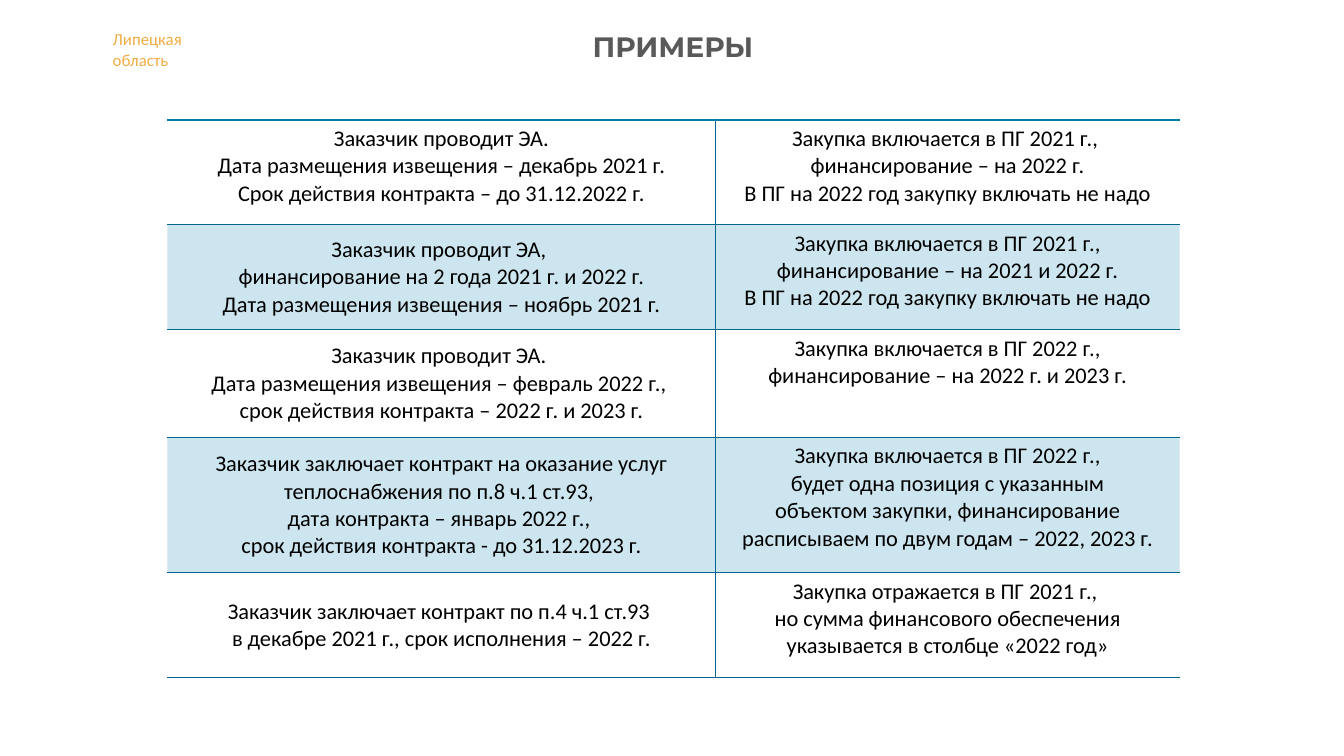
"""Build a slide with a table of procurement planning examples."""
import pptx
import pptx.dml.color
import pptx.enum.text
import pptx.oxml
import pptx.oxml.ns
import pptx.util

RGB = pptx.dml.color.RGBColor
GOLD = RGB(0xF2, 0xAC, 0x44)
GREY = RGB(0x59, 0x59, 0x59)
BLACK = RGB(0x00, 0x00, 0x00)
BLUE = RGB(0x00, 0x7F, 0xAC)
NAVY = RGB(0x00, 0x66, 0x8A)
WHITE = RGB(0xFF, 0xFF, 0xFF)

PAGE_W = pptx.util.Inches(13.33)
PAGE_H = pptx.util.Inches(7.5)
COLS = (40.81, 34.51)
ROWS = (13.87, 13.87, 14.27, 17.87, 13.87)
TINT = 20

CASES = (
    (("Заказчик проводит ЭА.",
      "Дата размещения извещения – декабрь 2021 г.",
      "Срок действия контракта – до 31.12.2022 г."),
     ("Закупка включается в ПГ 2021 г., ",
      "финансирование – на 2022 г.",
      "В ПГ на 2022 год закупку включать не надо")),
    (("Заказчик проводит ЭА, ",
      "финансирование на 2 года 2021 г. и 2022 г.",
      "Дата размещения извещения – ноябрь 2021 г."),
     ("Закупка включается в ПГ 2021 г.,",
      "финансирование – на 2021 и 2022 г.",
      "В ПГ на 2022 год закупку включать не надо")),
    (("Заказчик проводит ЭА. ",
      "Дата размещения извещения – февраль 2022 г., ",
      "срок действия контракта – 2022 г. и 2023 г."),
     ("Закупка включается в ПГ 2022 г.,",
      "финансирование – на 2022 г. и 2023 г.")),
    (("Заказчик заключает контракт на оказание услуг",
      "теплоснабжения по п.8 ч.1 ст.93, ",
      "дата контракта – январь 2022 г., ",
      "срок действия контракта - до 31.12.2023 г."),
     ("Закупка включается в ПГ 2022 г.,",
      "будет одна позиция с указанным",
      "объектом закупки, финансирование",
      "расписываем по двум годам – 2022, 2023 г.")),
    (("Заказчик заключает контракт по п.4 ч.1 ст.93 ",
      "в декабре 2021 г., срок исполнения – 2022 г."),
     ("Закупка отражается в ПГ 2021 г., ",
      "но сумма финансового обеспечения",
      "указывается в столбце «2022 год»")),
)


def wide(share):
    """Turn a percentage of the slide's width into a length."""
    return round(PAGE_W * share / 100)


def high(share):
    """Turn a percentage of the slide's height into a length."""
    return round(PAGE_H * share / 100)


def write(frame, lines, face, size, color, align, bold=False):
    """Write one paragraph per line into a text frame."""
    for i, line in enumerate(lines):
        para = frame.add_paragraph() if i else frame.paragraphs[0]
        para.alignment = align
        para.space_before = pptx.util.Pt(0)
        run = para.add_run()
        run.text = line
        run.font.name = face
        run.font.size = pptx.util.Pt(size)
        run.font.bold = bold
        run.font.color.rgb = color


def add_title(slide, text):
    """Move the title placeholder into place and fill it."""
    title = slide.shapes.title
    title.left, title.top = wide(13.28), high(3.2)
    title.width, title.height = wide(73.59), high(5.87)
    frame = title.text_frame
    frame.word_wrap = True
    frame.vertical_anchor = pptx.enum.text.MSO_ANCHOR.TOP
    write(frame, [text], "Montserrat", 20, GREY,
          pptx.enum.text.PP_ALIGN.CENTER, True)


def add_label(slide, lines):
    """Add the region label at the top left."""
    box = slide.shapes.add_textbox(wide(7.65), high(3.2), wide(6.83), high(6.67))
    box.text_frame.word_wrap = True
    write(box.text_frame, lines, "Calibri", 12, GOLD,
          pptx.enum.text.PP_ALIGN.LEFT)


def rule(cell, side, color):
    """Draw one border of a cell, or clear it when there is no color."""
    paint = "<a:noFill/>"
    if color is not None:
        paint = f'<a:solidFill><a:srgbClr val="{color}"/></a:solidFill>'
    space = pptx.oxml.ns.nsdecls("a")
    line = f'<a:ln{side} {space} w="{pptx.util.Pt(1)}">{paint}</a:ln{side}>'
    cell._tc.get_or_add_tcPr().append(pptx.oxml.parse_xml(line))


def shade(cell, row):
    """Fill every second row with a clear tint of blue."""
    cell.fill.solid()
    if row % 2 == 0:
        cell.fill.fore_color.rgb = WHITE
        return
    cell.fill.fore_color.rgb = BLUE
    tone = cell._tc.tcPr.find(".//" + pptx.oxml.ns.qn("a:solidFill"))
    tone = cell._tc.tcPr.findall(pptx.oxml.ns.qn("a:solidFill"))[-1][0]
    space = pptx.oxml.ns.nsdecls("a")
    tone.append(pptx.oxml.parse_xml(f'<a:alpha {space} val="{TINT * 1000}"/>'))


def fill_cell(cell, lines, row, col):
    """Write, rule and shade one cell."""
    write(cell.text_frame, lines, "Calibri", 16, BLACK,
          pptx.enum.text.PP_ALIGN.CENTER)
    anchor = pptx.enum.text.MSO_ANCHOR
    cell.vertical_anchor = anchor.MIDDLE if row and not col else anchor.TOP
    rule(cell, "L", NAVY if col else None)
    rule(cell, "R", None if col else NAVY)
    rule(cell, "T", NAVY if row else BLUE)
    rule(cell, "B", NAVY)
    shade(cell, row)


def add_cases(slide):
    """Add the table of cases and answers."""
    grid = slide.shapes.add_table(
        len(ROWS), len(COLS), wide(12.45), high(15.87),
        wide(sum(COLS)), high(sum(ROWS))).table
    grid.first_row = False
    grid.horz_banding = False
    for col, share in zip(grid.columns, COLS):
        col.width = wide(share)
    for row, share in zip(grid.rows, ROWS):
        row.height = high(share)
    for r, case in enumerate(CASES):
        for c, lines in enumerate(case):
            fill_cell(grid.cell(r, c), lines, r, c)


def main():
    """Build and save the slide."""
    deck = pptx.Presentation()
    deck.slide_width, deck.slide_height = PAGE_W, PAGE_H
    slide = deck.slides.add_slide(deck.slide_layouts[5])
    add_label(slide, ("Липецкая", "область"))
    add_title(slide, "ПРИМЕРЫ")
    add_cases(slide)
    deck.save("out.pptx")


if __name__ == "__main__":
    main()
